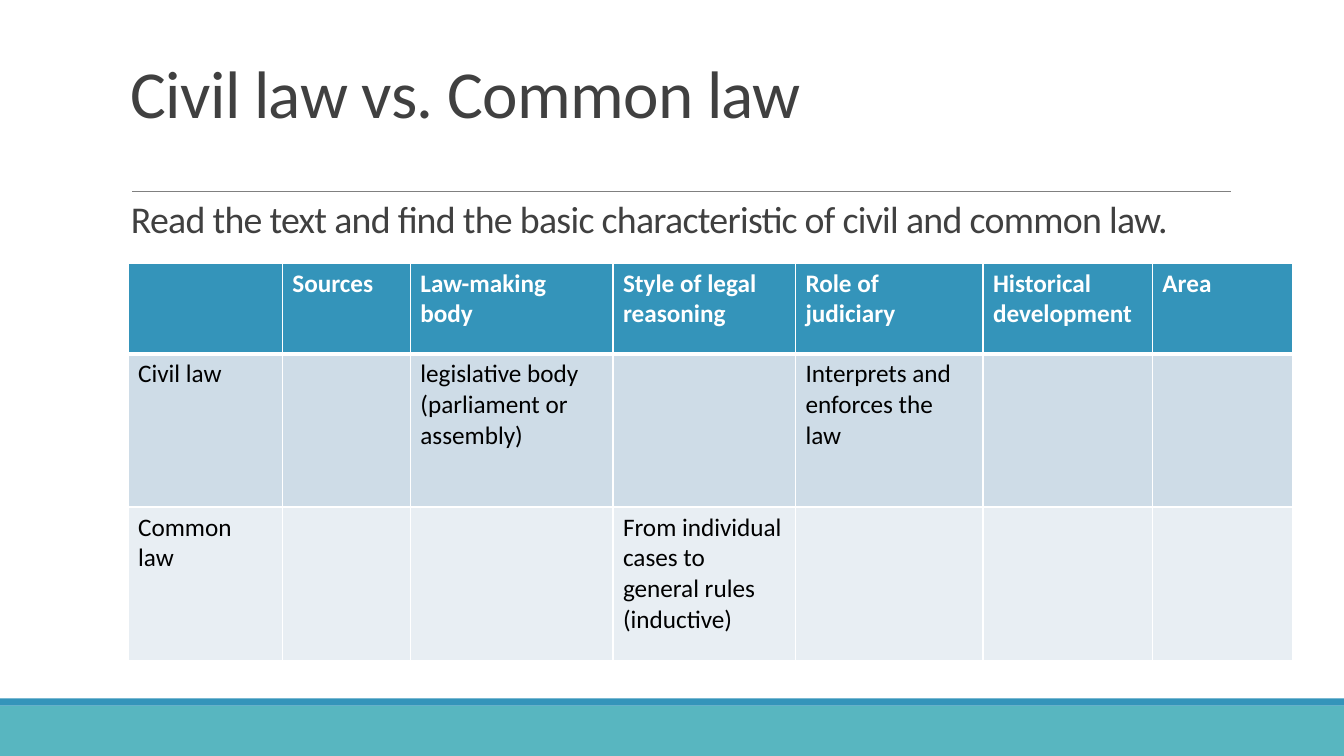
from lxml import etree
from pptx import Presentation
from pptx.dml.color import RGBColor
from pptx.enum.shapes import MSO_CONNECTOR, MSO_SHAPE
from pptx.enum.text import MSO_ANCHOR
from pptx.oxml.ns import qn
from pptx.util import Inches, Pt

RECT = MSO_SHAPE.RECTANGLE
LINE = MSO_CONNECTOR.STRAIGHT
BASE = MSO_ANCHOR.BOTTOM
HUES = {
    "teal": "58B6C0", "blue": "3494BA", "rule": "808080", "text": "404040",
    "white": "FFFFFF", "black": "000000", "mist": "CEDCE7", "pale": "E8EEF3",
}


def tint(name):
    return RGBColor.from_string(HUES[name])


def write(para, text, size=18, hue="black", bold=False, track=0):
    run = para.add_run()
    run.text = text
    font = run.font
    font.name, font.size, font.bold = "Calibri", Pt(size), bold
    font.color.rgb = tint(hue)
    if track:
        font._element.set("spc", str(track))


deck = Presentation()
deck.slide_width, deck.slide_height = Inches(13.33), Inches(7.5)
slide = deck.slides.add_slide(deck.slide_layouts[6])
shapes = slide.shapes

for top, high, hue in [(7, 0.5, "teal"), (6.93, 0.07, "blue")]:
    band = shapes.add_shape(RECT, 0, Inches(top), deck.slide_width, Inches(high))
    band.shadow.inherit = False
    band.fill.solid()
    band.fill.fore_color.rgb = tint(hue)
    band.line.fill.background()

rule = shapes.add_connector(LINE, Inches(1.31), Inches(1.9), Inches(12.21), Inches(1.9))
rule.line.color.rgb = tint("rule")
rule.line.width = Pt(0.5)
etree.SubElement(rule._element.spPr, qn("a:effectLst"))

title = shapes.add_textbox(Inches(1.2), Inches(0.31), Inches(11), Inches(2.13))
frame = title.text_frame
frame.word_wrap = True
frame.vertical_anchor = BASE
head = frame.paragraphs[0]
task = frame.add_paragraph()
head.line_spacing = task.line_spacing = 0.85
head.space_after = Pt(50)
write(head, "Civil law vs. Common law", size=48, hue="text", track=-50)
write(task, "Read the text and find the basic characteristic of civil and common law.",
      size=27, hue="text", track=-50)

wides = [1.53, 1.27, 2.01, 1.81, 1.86, 1.68, 1.39]
highs = [0.9, 1.52, 1.52]
fills = ["blue", "mist", "pale"]
rows = [
    ["", "Sources", "Law-making body", "Style of legal reasoning",
     "Role of judiciary", "Historical development", "Area"],
    ["Civil law", "", "legislative body (parliament or assembly)", "",
     "Interprets and enforces the law", "", ""],
    ["Common law", "", "", "From individual cases to general rules (inductive)",
     "", "", ""],
]
grid = shapes.add_table(len(rows), len(wides), Inches(1.27), Inches(2.61),
                        Inches(sum(wides)), Inches(sum(highs))).table
for col, wide in zip(grid.columns, wides):
    col.width = Inches(wide)

for r, texts in enumerate(rows):
    grid.rows[r].height = Inches(highs[r])
    top = r == 0
    for c, text in enumerate(texts):
        cell = grid.cell(r, c)
        props = cell._tc.get_or_add_tcPr()
        for side in "LRTB":
            thick = 3 if (r, side) in [(0, "B"), (1, "T")] else 1
            edge = etree.SubElement(props, qn("a:ln" + side), w=str(Pt(thick)))
            fill = etree.SubElement(edge, qn("a:solidFill"))
            etree.SubElement(fill, qn("a:srgbClr"), val=HUES["white"])
        cell.fill.solid()
        cell.fill.fore_color.rgb = tint(fills[r])
        if text:
            write(cell.text_frame.paragraphs[0], text,
                  hue="white" if top else "black", bold=top)

deck.save("out.pptx")
